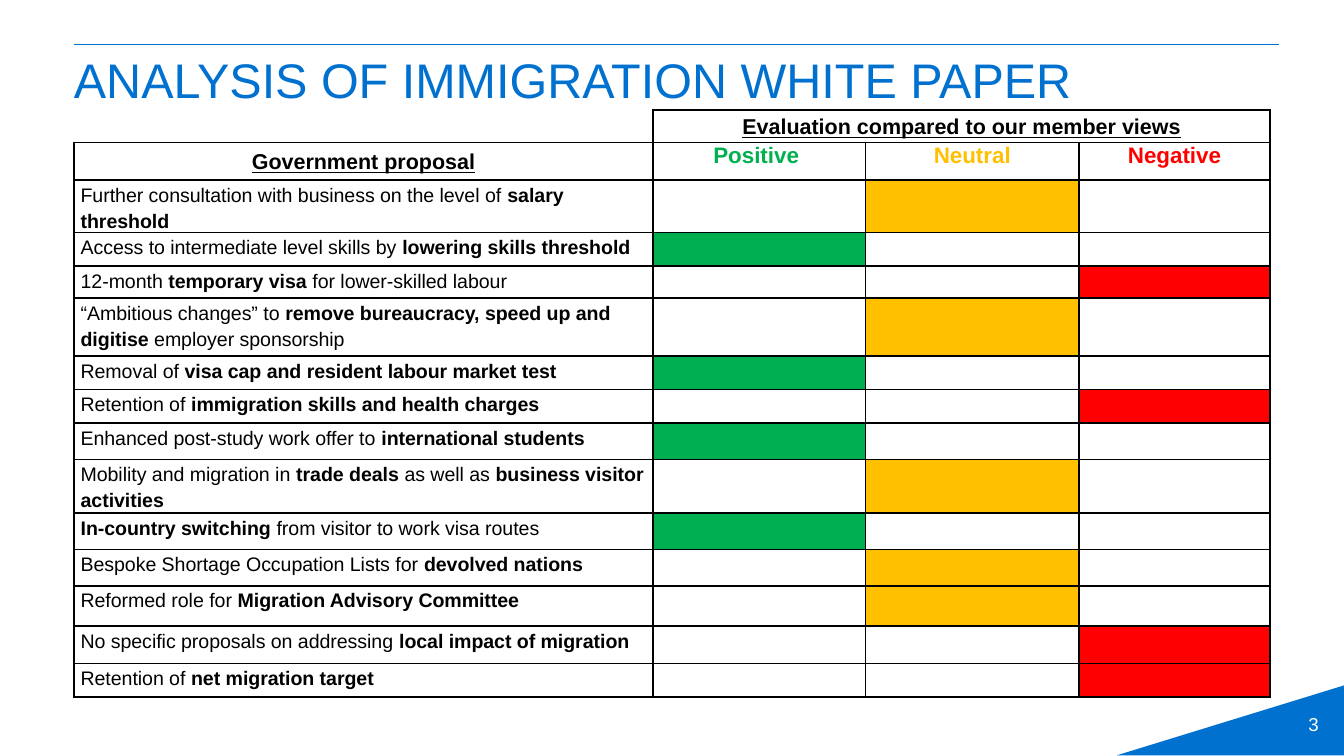
from lxml.etree import SubElement
from pptx import Presentation
from pptx.dml.color import RGBColor
from pptx.enum.shapes import MSO_CONNECTOR as Connector, MSO_SHAPE as Shape
from pptx.enum.text import MSO_ANCHOR as Anchor, MSO_AUTO_SIZE as AutoSize, PP_ALIGN as Align
from pptx.oxml.ns import qn
from pptx.util import Inches, Pt

BLUE, BLACK, WHITE = "0071CF", "000000", "FFFFFF"
TITLE = "ANALYSIS OF IMMIGRATION WHITE PAPER"
EVALUATION = "Evaluation compared to our member views"
RATINGS = [("Positive ", "00B050"), ("Neutral", "FFC000"), ("Negative", "FF0000")]
POSITIVE, NEUTRAL, NEGATIVE = 1, 2, 3
PROPOSALS = [
    (0.39, NEUTRAL, "Further consultation with business on the level of *salary threshold"),
    (0.25, POSITIVE, "Access to intermediate level skills by *lowering skills threshold"),
    (0.24, NEGATIVE, "12-month *temporary visa* for lower-skilled labour"),
    (0.43, NEUTRAL, "“Ambitious changes” to *remove bureaucracy, speed up and digitise* employer sponsorship"),
    (0.25, POSITIVE, "Removal of *visa cap and resident labour market test"),
    (0.25, NEGATIVE, "Retention of *immigration skills and health charges"),
    (0.27, POSITIVE, "Enhanced post-study work offer to *international students"),
    (0.4, NEUTRAL, "Mobility and migration in *trade deals* as well as *business visitor activities"),
    (0.27, POSITIVE, "*In-country switching* from visitor to work visa routes"),
    (0.27, NEUTRAL, "Bespoke Shortage Occupation Lists for *devolved nations"),
    (0.3, NEUTRAL, "Reformed role for *Migration Advisory Committee"),
    (0.28, NEGATIVE, "No specific proposals on addressing *local impact of migration"),
    (0.25, NEGATIVE, "Retention of *net migration target"),
]
COLUMNS = [4.31, 1.58, 1.59, 1.42]
ROWS = [0.24, 0.28] + [height for height, rating, text in PROPOSALS]


def rgb(value):
    return RGBColor.from_string(value)


def add_span(para, text, size, color, bold=False, underline=False):
    span = para.add_run()
    span.text = text
    font = span.font
    font.name, font.size, font.bold, font.underline = "Arial", Pt(size), bold, underline
    font.color.rgb = rgb(color)


def cell_para(cell, after=6, align=Align.LEFT):
    para = cell.text_frame.paragraphs[0]
    para.alignment = align
    para.line_spacing, para.space_after = Pt(14), Pt(after)
    return para


def add_borders(cell, sides):
    properties = cell._tc.get_or_add_tcPr()
    for side in sides:
        line = SubElement(properties, qn("a:ln" + side), w="12700")
        fill = SubElement(line, qn("a:solidFill"))
        SubElement(fill, qn("a:srgbClr"), val=BLACK)


deck = Presentation()
deck.slide_width = Inches(10)
deck.slide_height = deck.slide_width * 9 // 16
page = deck.slides.add_slide(deck.slide_layouts[5])

rule = page.shapes.add_connector(Connector.STRAIGHT, Inches(0.55), Inches(0.33), Inches(9.52), Inches(0.33))
rule.line.color.rgb = rgb(BLUE)
rule.line.width = Pt(0.25)
SubElement(rule._element.spPr, qn("a:effectLst"))

corner = page.shapes.add_shape(Shape.ISOSCELES_TRIANGLE, Inches(8.31), Inches(5.1), Inches(1.69), Inches(0.52))
corner.adjustments[0] = 1
corner.shadow.inherit = False
corner.fill.solid()
corner.fill.fore_color.rgb = rgb(BLUE)
corner.line.fill.background()

number = page.shapes.add_textbox(Inches(7.58), Inches(5.24), Inches(2.33), Inches(0.3)).text_frame
number.word_wrap = True
number.vertical_anchor = Anchor.MIDDLE
number.paragraphs[0].alignment = Align.RIGHT
add_span(number.paragraphs[0], "3", 10, WHITE)

title = page.shapes.title
title.left, title.top, title.width, title.height = Inches(0.55), Inches(0.39), Inches(8.98), Inches(0.58)
frame = title.text_frame
frame.margin_left = frame.margin_top = frame.margin_right = frame.margin_bottom = 0
frame.vertical_anchor = Anchor.TOP
frame.auto_size = AutoSize.NONE
frame.paragraphs[0].alignment = Align.LEFT
frame.paragraphs[0].line_spacing = Pt(30)
add_span(frame.paragraphs[0], TITLE, 26, BLUE)

table = page.shapes.add_table(
    len(ROWS), len(COLUMNS), Inches(0.55), Inches(0.82), Inches(sum(COLUMNS)), Inches(sum(ROWS))
).table
table.first_row = table.horz_banding = False
for column, width in zip(table.columns, COLUMNS):
    column.width = Inches(width)
for row, height in zip(table.rows, ROWS):
    row.height = Inches(height)

for row_index in range(len(ROWS)):
    for column_index in range(len(COLUMNS)):
        cell = table.cell(row_index, column_index)
        cell.margin_left = cell.margin_right = Inches(0.05)
        cell.margin_top = cell.margin_bottom = 0
        add_borders(cell, "RB" if row_index == column_index == 0 else "LRTB")
        cell.fill.background()

table.cell(0, 1).merge(table.cell(0, 3))
for cell, text, after in [(table.cell(0, 1), EVALUATION, 6), (table.cell(1, 0), "Government proposal", 1)]:
    cell.vertical_anchor = Anchor.MIDDLE
    add_span(cell_para(cell, after, Align.CENTER), text, 11.5, BLACK, True, True)
for column_index, (text, color) in enumerate(RATINGS, 1):
    add_span(cell_para(table.cell(1, column_index), 6, Align.CENTER), text, 12, color, True)

for row_index, (height, rating, text) in enumerate(PROPOSALS, 2):
    para = cell_para(table.cell(row_index, 0), 0 if row_index == 2 else 6)
    for part_index, part in enumerate(text.split("*")):
        if part:
            add_span(para, part, 10.5, BLACK, part_index % 2 == 1)
    mark = table.cell(row_index, rating).fill
    mark.solid()
    mark.fore_color.rgb = rgb(RATINGS[rating - 1][1])

for cell in table.iter_cells():
    if not cell.text:
        para = cell.text_frame.paragraphs[0]
        SubElement(para._p, qn("a:endParaRPr"), sz="1000")

deck.save("out.pptx")
